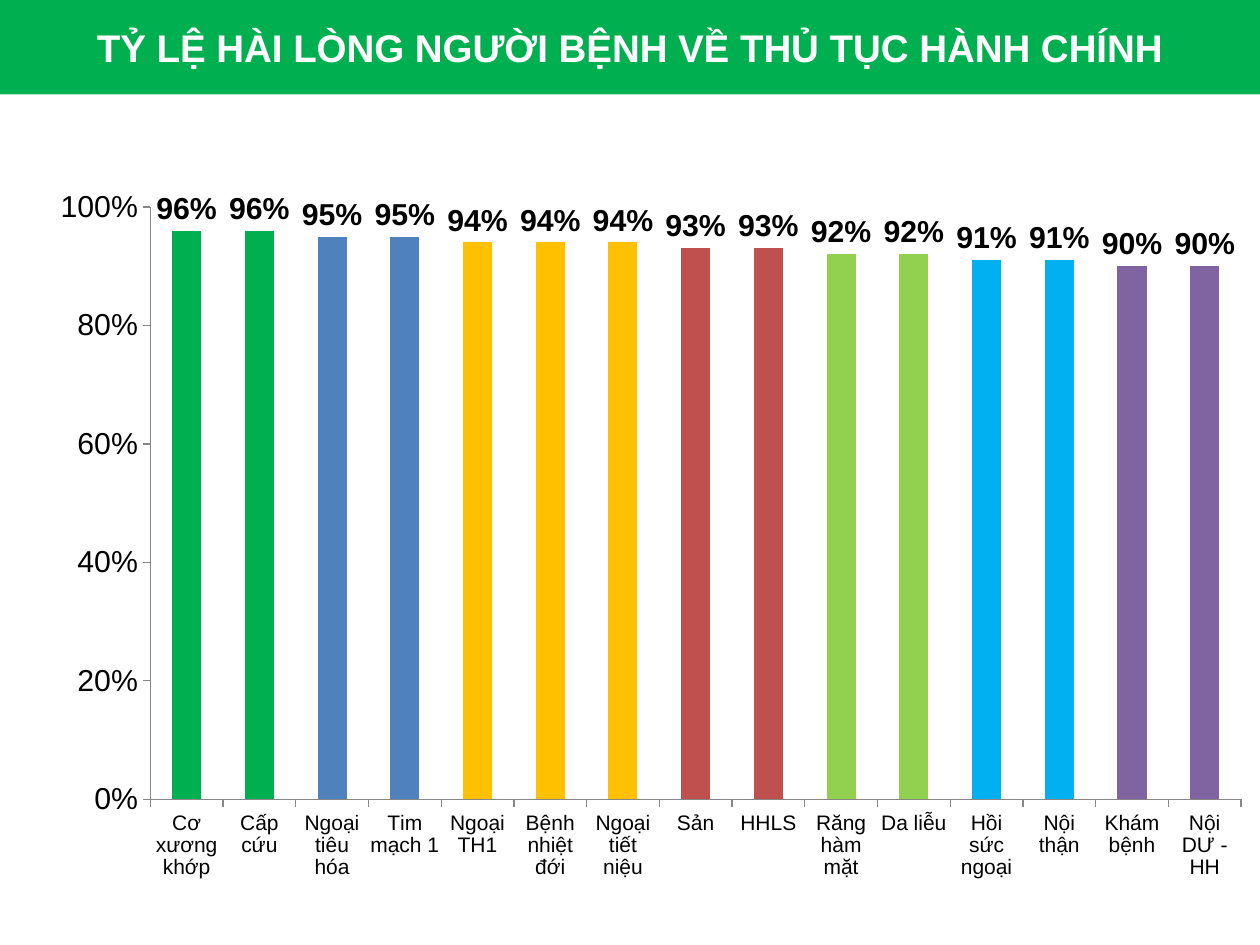
"""Build a slide charting patient satisfaction with administrative procedures by department."""
from lxml import etree
from pptx import Presentation
from pptx import util as u
from pptx.chart.data import CategoryChartData
from pptx.dml.color import RGBColor
from pptx.enum import chart as ch, shapes, text
from pptx.oxml.ns import qn

THEME = {
    "font": "Arial", "title_size": 22, "chart_size": 17.3, "category_size": 12,
    "banner": "00B050", "title": "FFFFFF", "ink": "000000", "axis": "868686",
    "bars": {0.96: "00B050", 0.95: "4F81BD", 0.94: "FFC000", 0.93: "C0504D",
             0.92: "92D050", 0.91: "00B0F0", 0.90: "8064A2"},
}
DEPARTMENTS = {
    0.96: ["Cơ xương khớp", "Cấp cứu"],
    0.95: ["Ngoại tiêu hóa", "Tim mạch 1"],
    0.94: ["Ngoại TH1", "Bệnh nhiệt đới", "Ngoại tiết niệu"],
    0.93: ["Sản", "HHLS"],
    0.92: ["Răng hàm mặt", "Da liễu"],
    0.91: ["Hồi sức ngoại", "Nội thận"],
    0.90: ["Khám bệnh", "Nội DƯ - HH"],
}
PLOT = {"layoutTarget": "inner", "xMode": "edge", "yMode": "edge",
        "x": 0.114, "y": 0.07, "w": 0.871, "h": 0.797}


def set_font(font, size, color, bold=False):
    values = {"name": THEME["font"], "size": u.Pt(size), "bold": bold}
    for name, value in values.items():
        setattr(font, name, value)
    font.color.rgb = RGBColor.from_string(color)


prs = Presentation()
prs.slide_width, prs.slide_height = u.Inches(10), u.Inches(7.5)
W, H = prs.slide_width, prs.slide_height
s = prs.slides.add_slide(prs.slide_layouts[6])

sp = s.shapes.add_shape(shapes.MSO_SHAPE.RECTANGLE, 0, 0, W, int(H * 0.1))
sp.shadow.inherit = False
sp.fill.solid()
sp.fill.fore_color.rgb = RGBColor.from_string(THEME["banner"])
sp.line.fill.background()
tf = sp.text_frame
tf.word_wrap = True
tf.vertical_anchor = text.MSO_ANCHOR.MIDDLE
p = tf.paragraphs[0]
p.alignment = text.PP_ALIGN.CENTER
r = p.add_run()
r.text = "TỶ LỆ HÀI LÒNG NGƯỜI BỆNH VỀ THỦ TỤC HÀNH CHÍNH"
set_font(r.font, THEME["title_size"], THEME["title"], True)

rates = [(name, rate) for rate, names in DEPARTMENTS.items() for name in names]
data = CategoryChartData(number_format="0%")
data.categories = [name for name, rate in rates]
data.add_series("Series 1", [rate for name, rate in rates])
left, top = u.Inches(0.06), u.Inches(1.23)
chart = s.shapes.add_chart(ch.XL_CHART_TYPE.COLUMN_CLUSTERED, left, top,
                           W - left, u.Inches(5.9), data).chart
chart.has_legend = chart.has_title = False
set_font(chart.font, THEME["chart_size"], THEME["ink"])

plot_area = chart._chartSpace.chart.plotArea
for old in plot_area.findall(qn("c:layout")):
    plot_area.remove(old)
layout = etree.Element(qn("c:layout"))
manual = etree.SubElement(layout, qn("c:manualLayout"))
for name, value in PLOT.items():
    etree.SubElement(manual, qn(f"c:{name}")).set("val", str(value))
plot_area.insert(0, layout)

axes = [(chart.category_axis, THEME["category_size"]), (chart.value_axis, THEME["chart_size"])]
for axis, size in axes:
    axis.has_major_gridlines = False
    axis.major_tick_mark = ch.XL_TICK_MARK.OUTSIDE
    axis.format.line.color.rgb = RGBColor.from_string(THEME["axis"])
    axis.format.line.width = u.Pt(0.75)
    set_font(axis.tick_labels.font, size, THEME["ink"])
for name, value in {"minimum_scale": 0, "maximum_scale": 1, "major_unit": 0.2}.items():
    setattr(chart.value_axis, name, value)
percent = {"number_format": "0%", "number_format_is_linked": False}

plot = chart.plots[0]
plot.gap_width = 150
plot.vary_by_categories = False
series = plot.series[0]
series.format.fill.solid()
series.format.fill.fore_color.rgb = RGBColor.from_string(THEME["bars"][0.95])
for i, (name, rate) in enumerate(rates):
    fill = series.points[i].format.fill
    fill.solid()
    fill.fore_color.rgb = RGBColor.from_string(THEME["bars"][rate])

labels = series.data_labels
labels.show_value = True
labels.position = ch.XL_LABEL_POSITION.OUTSIDE_END
set_font(labels.font, THEME["chart_size"], THEME["ink"], True)
for target in (chart.value_axis.tick_labels, labels):
    for name, value in percent.items():
        setattr(target, name, value)

prs.save("out.pptx")
